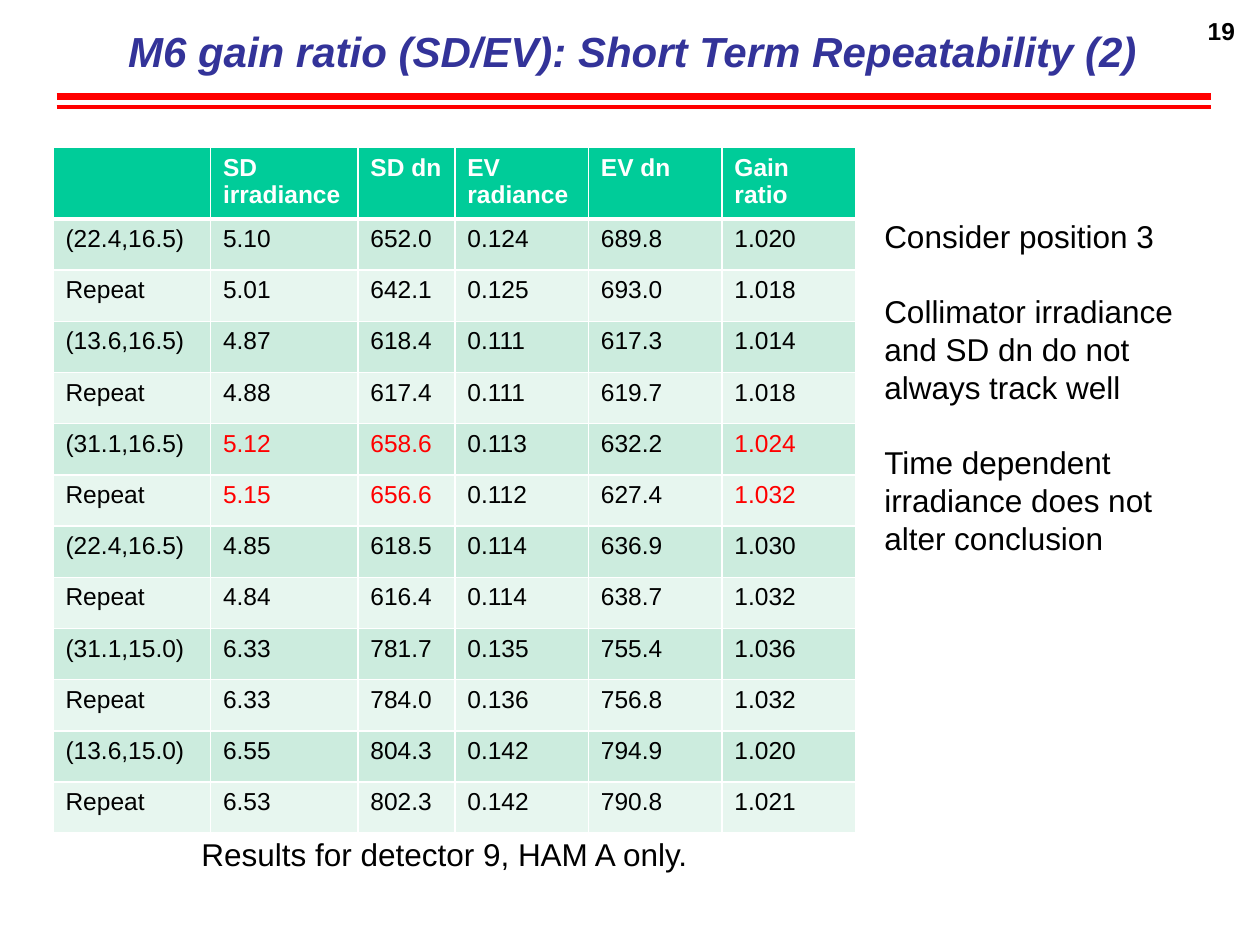
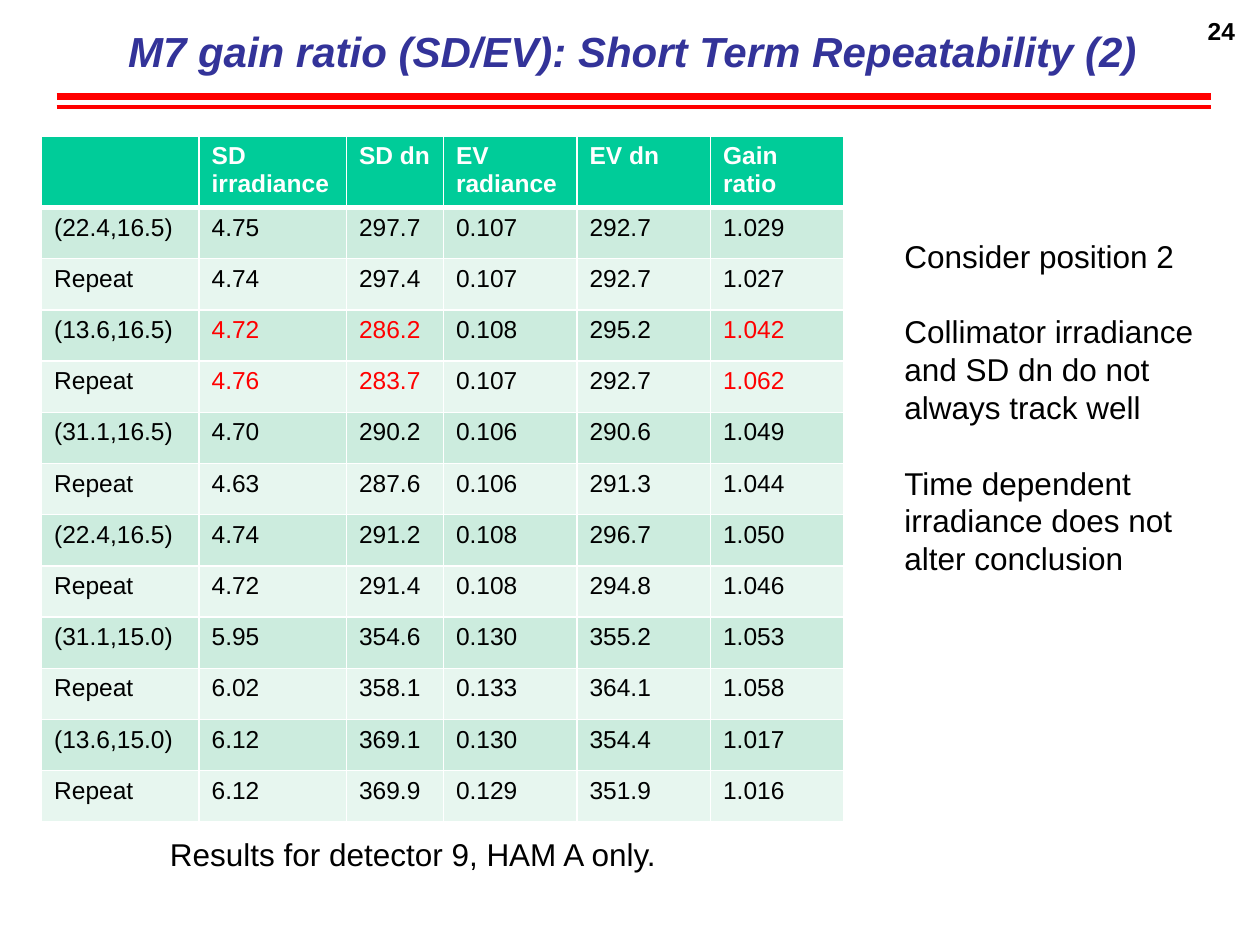
from dataclasses import dataclass
from typing import Any

from lxml.etree import SubElement
from pptx import Presentation
from pptx.dml.color import RGBColor
from pptx.enum.shapes import MSO_CONNECTOR as Connector
from pptx.enum.text import MSO_ANCHOR as Anchor
from pptx.enum.text import MSO_AUTO_SIZE as AutoSize
from pptx.enum.text import PP_ALIGN as Align
from pptx.oxml.ns import qn
from pptx.util import Inches, Pt

BLACK = RGBColor(0x00, 0x00, 0x00)
WHITE = RGBColor(0xFF, 0xFF, 0xFF)
RED = RGBColor(0xFF, 0x00, 0x00)
NAVY = RGBColor(0x33, 0x33, 0x99)
GREEN = RGBColor(0x00, 0xCC, 0x99)
PALE_GREEN = RGBColor(0xCC, 0xEC, 0xDE)
PALEST_GREEN = RGBColor(0xE7, 0xF6, 0xEF)

TITLE_FONT = {"name": "Arial", "size": Pt(24), "bold": True, "italic": True}
BODY_FONT = {"name": "Arial", "size": Pt(18)}
CELL_FONT = {"name": "Arial", "size": Pt(14), "bold": False}
STRONG_FONT = {**CELL_FONT, "bold": True}
BODY_LINE = Pt(21.6)

HEADERS = ["", "SD irradiance", "SD dn", "EV radiance", "EV dn", "Gain ratio"]
POSITIONS = ["(22.4,16.5)", "(13.6,16.5)", "(31.1,16.5)",
             "(22.4,16.5)", "(31.1,15.0)", "(13.6,15.0)"]
ROW_LABELS = [label for position in POSITIONS for label in (position, "Repeat")]
COLUMN_WIDTHS = [1.25, 1.17, 0.77, 1.06, 1.06, 1.06]
TABLE_HEIGHT = 5.43
HEADER_HEIGHT = 0.55
MARKED_COLUMNS = {1, 2, 5}


@dataclass(frozen=True)
class Rule:
    top: float
    weight: float


@dataclass(frozen=True)
class GainPage:
    number: int
    band: str
    position: int
    table_left: float
    table_top: float
    caption_left: float
    remarks_left: float
    remarks_top: float
    marked_rows: set[int]
    measurements: list[str]


RULES = [Rule(0.77, 4), Rule(0.85, 2)]

PAGES = [
    GainPage(19, "M6", 3, 0.42, 1.17, 1.5, 6.92, 1.67, {5, 6}, [
        "5.10 652.0 0.124 689.8 1.020",
        "5.01 642.1 0.125 693.0 1.018",
        "4.87 618.4 0.111 617.3 1.014",
        "4.88 617.4 0.111 619.7 1.018",
        "5.12 658.6 0.113 632.2 1.024",
        "5.15 656.6 0.112 627.4 1.032",
        "4.85 618.5 0.114 636.9 1.030",
        "4.84 616.4 0.114 638.7 1.032",
        "6.33 781.7 0.135 755.4 1.036",
        "6.33 784.0 0.136 756.8 1.032",
        "6.55 804.3 0.142 794.9 1.020",
        "6.53 802.3 0.142 790.8 1.021",
    ]),
    GainPage(24, "M7", 2, 0.33, 1.08, 1.25, 7.08, 1.83, {3, 4}, [
        "4.75 297.7 0.107 292.7 1.029",
        "4.74 297.4 0.107 292.7 1.027",
        "4.72 286.2 0.108 295.2 1.042",
        "4.76 283.7 0.107 292.7 1.062",
        "4.70 290.2 0.106 290.6 1.049",
        "4.63 287.6 0.106 291.3 1.044",
        "4.74 291.2 0.108 296.7 1.050",
        "4.72 291.4 0.108 294.8 1.046",
        "5.95 354.6 0.130 355.2 1.053",
        "6.02 358.1 0.133 364.1 1.058",
        "6.12 369.1 0.130 354.4 1.017",
        "6.12 369.9 0.129 351.9 1.016",
    ]),
]


def apply_values(target: Any, values: dict[str, Any]) -> None:
    for name, value in values.items():
        setattr(target, name, value)


def write_span(para: Any, text: str, font: dict[str, Any], color: RGBColor) -> None:
    span = para.add_run()
    span.text = text
    apply_values(span.font, font)
    span.font.color.rgb = color


def add_text(page: Any, left: float, top: float, width: float, height: float,
             texts: list[str], font: dict[str, Any], wrap: bool = True,
             **para_format: Any) -> None:
    box = page.shapes.add_textbox(Inches(left), Inches(top), Inches(width), Inches(height))
    frame = box.text_frame
    frame.word_wrap = wrap
    for index, text in enumerate(texts):
        para = frame.add_paragraph() if index else frame.paragraphs[0]
        apply_values(para, para_format)
        if index:
            para.space_before = BODY_LINE
        write_span(para, text, font, BLACK)


def add_title(page: Any, text: str) -> None:
    title = page.shapes.title
    apply_values(title, {"left": Inches(0.52), "top": Inches(0.15),
                         "width": Inches(9), "height": Inches(0.5)})
    apply_values(title.text_frame, {"word_wrap": True, "auto_size": AutoSize.NONE,
                                    "vertical_anchor": Anchor.MIDDLE})
    para = title.text_frame.paragraphs[0]
    para.alignment = Align.CENTER
    write_span(para, text, TITLE_FONT, NAVY)


def add_rule(page: Any, rule: Rule) -> None:
    line = page.shapes.add_connector(Connector.STRAIGHT, Inches(0.45), Inches(rule.top),
                                     Inches(9.61), Inches(rule.top))
    line.line.color.rgb = RED
    line.line.width = Pt(rule.weight)
    SubElement(line._element.spPr, qn("a:effectLst"))


def set_borders(cell: Any, row: int) -> None:
    weights = {"lnL": 1, "lnR": 1, "lnT": 3 if row == 1 else 1, "lnB": 3 if row == 0 else 1}
    properties = cell._tc.get_or_add_tcPr()
    for index, (side, weight) in enumerate(weights.items()):
        border = SubElement(properties, qn(f"a:{side}"), w=str(Pt(weight)))
        fill = SubElement(border, qn("a:solidFill"))
        SubElement(fill, qn("a:srgbClr"), val=str(WHITE))
        properties.insert(index, border)


def add_gain_table(page: Any, content: GainPage) -> None:
    rows = [HEADERS] + [[label, *values.split()]
                        for label, values in zip(ROW_LABELS, content.measurements)]
    table = page.shapes.add_table(
        len(rows), len(HEADERS), Inches(content.table_left), Inches(content.table_top),
        Inches(sum(COLUMN_WIDTHS)), Inches(TABLE_HEIGHT)).table
    for column, width in zip(table.columns, COLUMN_WIDTHS):
        column.width = Inches(width)
    body_height = (TABLE_HEIGHT - HEADER_HEIGHT) / len(ROW_LABELS)
    for row, texts in enumerate(rows):
        table.rows[row].height = Inches(body_height if row else HEADER_HEIGHT)
        fill = (PALE_GREEN if row % 2 else PALEST_GREEN) if row else GREEN
        for column, text in enumerate(texts):
            cell = table.cell(row, column)
            cell.fill.solid()
            cell.fill.fore_color.rgb = fill
            set_borders(cell, row)
            marked = row in content.marked_rows and column in MARKED_COLUMNS
            color = (RED if marked else BLACK) if row else WHITE
            if text:
                write_span(cell.text_frame.paragraphs[0], text,
                           CELL_FONT if row else STRONG_FONT, color)


def add_gain_page(deck: Any, content: GainPage) -> None:
    page = deck.slides.add_slide(deck.slide_layouts[5])
    add_text(page, 9.18, 0.08, 0.72, 0.51, [str(content.number)], STRONG_FONT,
             alignment=Align.RIGHT)
    add_title(page, f"{content.band} gain ratio (SD/EV): Short Term Repeatability (2)")
    for rule in RULES:
        add_rule(page, rule)
    add_gain_table(page, content)
    add_text(page, content.caption_left, 6.58, 4.1, 0.4,
             ["Results for detector 9, HAM A only."], BODY_FONT, wrap=False,
             line_spacing=BODY_LINE)
    remarks = [f"Consider position {content.position}",
               "Collimator irradiance and SD dn do not always track well",
               "Time dependent irradiance does not alter conclusion"]
    add_text(page, content.remarks_left, content.remarks_top, 2.83, 2.83, remarks, BODY_FONT,
             line_spacing=BODY_LINE)


def main() -> None:
    deck = Presentation()
    deck.slide_width = Inches(10)
    deck.slide_height = Inches(7.5)
    for content in PAGES:
        add_gain_page(deck, content)
    deck.save("out.pptx")


if __name__ == "__main__":
    main()
